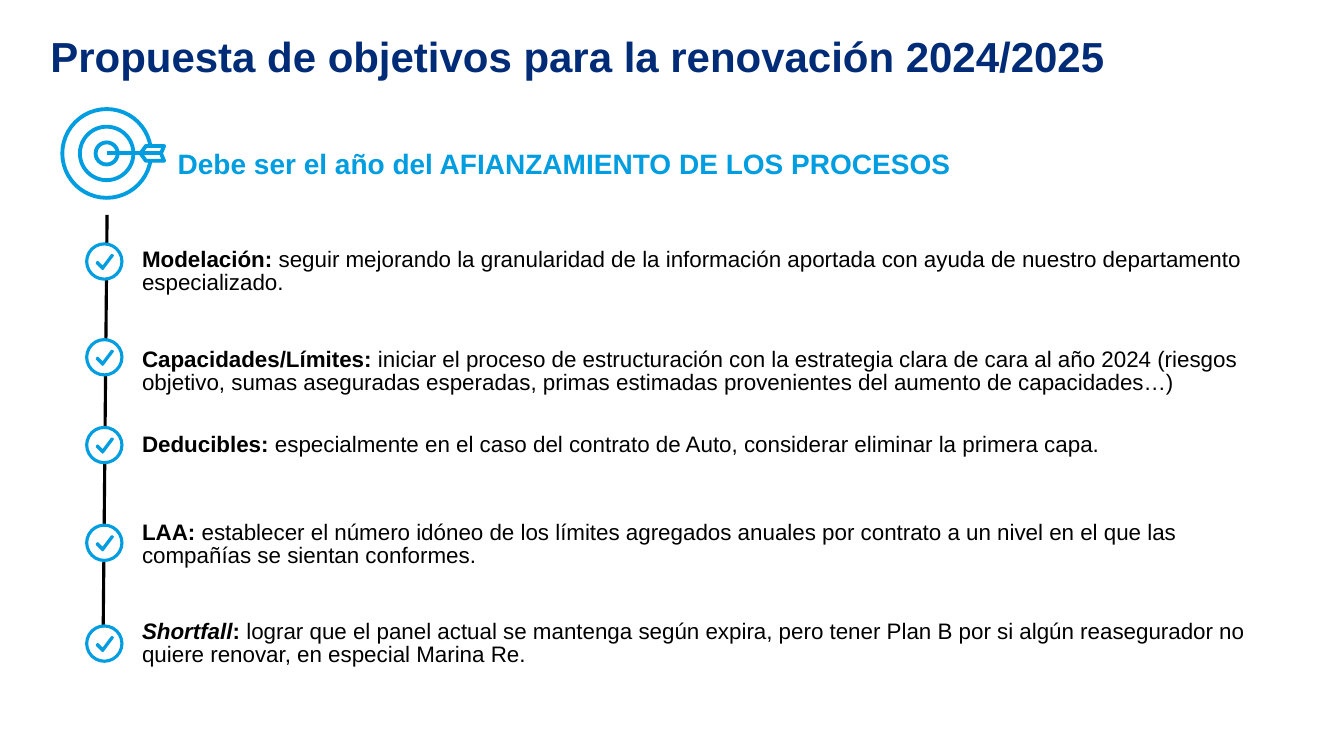
"""Build the slide with the goals for the 2024/2025 renewal."""
from pptx import Presentation
from pptx.dml.color import RGBColor
from pptx.enum.shapes import MSO_CONNECTOR, MSO_SHAPE
from pptx.enum.text import MSO_ANCHOR, MSO_AUTO_SIZE, PP_ALIGN
from pptx.oxml.ns import qn
from pptx.util import Pt
from lxml import etree

TITLE = "Propuesta de objetivos para la renovación 2024/2025"
HEADLINE = "Debe ser el año del AFIANZAMIENTO DE LOS PROCESOS"
GOALS = [
    {"check_top": 174.2, "text_top": 177.8, "height": 33.1, "term": "Modelación", "italic": False,
     "detail": "seguir mejorando la granularidad de la información aportada con ayuda de "
               "nuestro departamento especializado."},
    {"check_top": 242.6, "text_top": 249.1, "height": 33.1, "term": "Capacidades/Límites", "italic": False,
     "detail": "iniciar el proceso de estructuración con la estrategia clara de cara al año 2024 "
               "(riesgos objetivo, sumas aseguradas esperadas, primas estimadas provenientes del "
               "aumento de capacidades…)"},
    {"check_top": 305.3, "text_top": 310.3, "height": 16.6, "term": "Deducibles", "italic": False,
     "detail": "especialmente en el caso del contrato de Auto, considerar eliminar la primera capa."},
    {"check_top": 375.1, "text_top": 373, "height": 33.1, "term": "LAA", "italic": False,
     "detail": "establecer el número idóneo de los límites agregados anuales por contrato a un "
               "nivel en el que las compañías se sientan conformes."},
    {"check_top": 447.1, "text_top": 443.5, "height": 33.1, "term": "Shortfall", "italic": True,
     "detail": "lograr que el panel actual se mantenga según expira, pero tener Plan B por si algún "
               "reasegurador no quiere renovar, en especial Marina Re."},
]
COLORS = {"navy": "002C77", "sky": "009DE0", "black": "000000", "white": "FFFFFF"}
FONT = "Arial"
CHECK_LEFT, CHECK_SIZE = 61.9, 25.2
TICK = [(11.5, 18), (7.2, 13.7), (7.9, 13), (11.5, 16.6), (18, 7.9), (18.7, 8.4)]
TARGET_X, TARGET_Y = 76.2, 109.6
TARGET_RADII = [31.7, 19.1, 7.9]
FLETCHING = [(24.2, 0), (28, -5.3), (41, -5.3), (38.8, 0), (41, 5.3), (28, 5.3)]


def color(name):
    return RGBColor.from_string(COLORS[name])


def paint(shape, fill, width):
    shape.shadow.inherit = False
    if fill:
        shape.fill.solid()
        shape.fill.fore_color.rgb = color(fill)
    else:
        shape.fill.background()
    shape.line.color.rgb = color("sky")
    shape.line.width = Pt(width)


def add_circle(slide, left, top, size, fill, width):
    circle = slide.shapes.add_shape(MSO_SHAPE.OVAL, Pt(left), Pt(top), Pt(size), Pt(size))
    paint(circle, fill, width)


def add_outline(slide, offsets, left, top, fill, width):
    points = [(Pt(left + x), Pt(top + y)) for x, y in offsets]
    builder = slide.shapes.build_freeform(*points[0])
    builder.add_line_segments(points[1:], close=True)
    paint(builder.convert_to_shape(), fill, width)


def add_line(slide, x1, y1, x2, y2, shade, width):
    line = slide.shapes.add_connector(MSO_CONNECTOR.STRAIGHT, Pt(x1), Pt(y1), Pt(x2), Pt(y2))
    line.line.color.rgb = color(shade)
    line.line.width = Pt(width)
    etree.SubElement(line._element.spPr, qn("a:effectLst"))


def write(shape, runs, size, shade, spacing, after=0):
    frame = shape.text_frame
    frame.word_wrap = True
    frame.vertical_anchor = MSO_ANCHOR.TOP
    frame.margin_left = frame.margin_right = frame.margin_top = frame.margin_bottom = 0
    paragraph = frame.paragraphs[0]
    paragraph.alignment = PP_ALIGN.LEFT
    paragraph.line_spacing = spacing
    paragraph.space_before = Pt(0)
    paragraph.space_after = Pt(after)
    for text, bold, italic in runs:
        run = paragraph.add_run()
        run.text = text
        run.font.name = FONT
        run.font.size = Pt(size)
        run.font.bold = bold
        run.font.italic = italic
        run.font.color.rgb = color(shade)


def add_text(slide, left, top, width, height, runs, size, shade, after=0):
    box = slide.shapes.add_textbox(Pt(left), Pt(top), Pt(width), Pt(height))
    write(box, runs, size, shade, 0.86, after)
    box.text_frame.auto_size = MSO_AUTO_SIZE.SHAPE_TO_FIT_TEXT


def add_target(slide):
    for radius in TARGET_RADII:
        add_circle(slide, TARGET_X - radius, TARGET_Y - radius, 2 * radius, None, 2.75)
    add_outline(slide, FLETCHING, TARGET_X, TARGET_Y, "white", 2.75)
    add_line(slide, TARGET_X, TARGET_Y, TARGET_X + 38.8, TARGET_Y, "sky", 2.75)


def add_goal(slide, goal):
    add_circle(slide, CHECK_LEFT, goal["check_top"], CHECK_SIZE, "white", 2.25)
    add_outline(slide, TICK, CHECK_LEFT, goal["check_top"], "sky", 1.5)
    runs = [(goal["term"], True, goal["italic"]), (": ", True, False), (goal["detail"], False, False)]
    add_text(slide, 101.5, goal["text_top"], 800, goal["height"], runs, 16, "black", 24)


def main():
    deck = Presentation()
    deck.slide_width, deck.slide_height = Pt(960), Pt(540)
    slide = deck.slides.add_slide(deck.slide_layouts[5])
    title = slide.shapes.title
    title.left, title.top, title.width, title.height = Pt(36), Pt(28.8), Pt(886.3), Pt(38.9)
    write(title, [(TITLE, True, False)], 30, "navy", 0.8)
    title.text_frame.auto_size = MSO_AUTO_SIZE.NONE
    add_line(slide, 76.5, 153.5, 73.6, 463, "black", 2.25)
    add_target(slide)
    add_text(slide, 126.9, 108, 732, 20.9, [(HEADLINE, True, False)], 20, "sky")
    for goal in GOALS:
        add_goal(slide, goal)
    deck.save("out.pptx")


if __name__ == "__main__":
    main()
